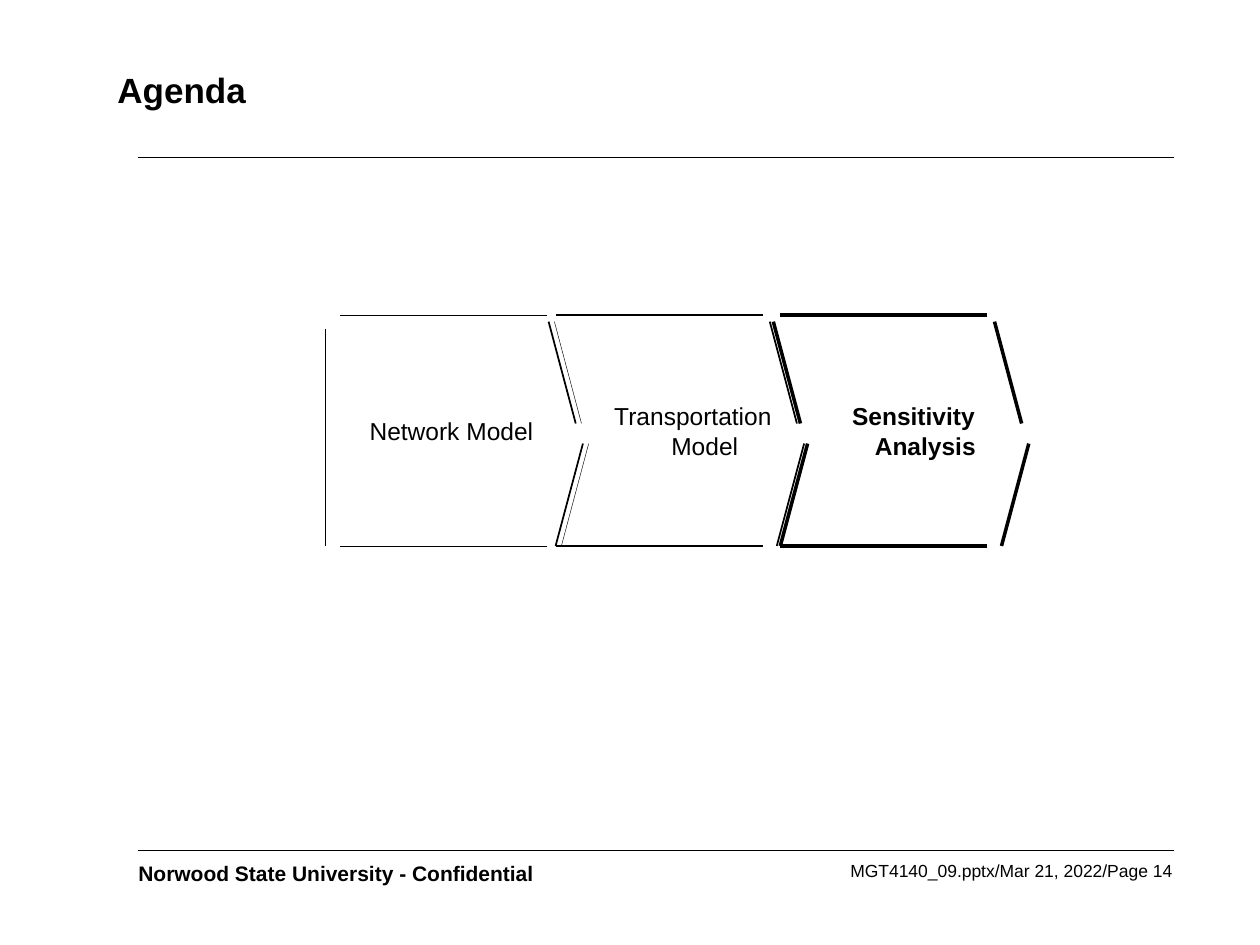
import pptx
import pptx.dml.color
import pptx.enum.shapes
import pptx.enum.text
import pptx.oxml
import pptx.oxml.ns
import pptx.util

Pt = pptx.util.Pt
ALIGN = pptx.enum.text.PP_ALIGN
ANCHOR = pptx.enum.text.MSO_ANCHOR
BLACK = pptx.dml.color.RGBColor(0, 0, 0)
FONT = "Arial"

# Steps of the agenda, in points
TOP, BOTTOM = 180, 312
BAR = 118.3        # length of the top and bottom bars
EDGE_STEP = 126.4  # from a step's left edge to its right edge
HANG = 13.5        # hanging indent of the labels


def add_line(shapes, x1, y1, x2, y2, weight):
    s = shapes.add_connector(pptx.enum.shapes.MSO_CONNECTOR.STRAIGHT,
                             Pt(x1), Pt(y1), Pt(x2), Pt(y2))
    s.line.color.rgb = BLACK
    s.line.width = Pt(weight)
    s._element.spPr.append(pptx.oxml.parse_xml(
        "<a:effectLst %s/>" % pptx.oxml.ns.nsdecls("a")))


def add_text(slide, text, x, y, w, h, size, bold=False,
             align=ALIGN.LEFT, anchor=ANCHOR.TOP):
    s = slide.shapes.add_textbox(Pt(x), Pt(y), Pt(w), Pt(h))
    tf = s.text_frame
    tf.word_wrap = True
    tf.vertical_anchor = anchor
    tf.text = text
    p = tf.paragraphs[0]
    p.alignment = align
    r = p.runs[0]
    r.font.name = FONT
    r.font.size = Pt(size)
    r.font.bold = bold
    r.font.color.rgb = BLACK
    return p


def add_label(slide, text, x, w, bold=False):
    p = add_text(slide, text, x, TOP, w, BOTTOM - TOP, 14, bold,
                 ALIGN.CENTER, ANCHOR.MIDDLE)
    pPr = p._p.get_or_add_pPr()
    pPr.set("marL", str(Pt(HANG)))
    pPr.set("indent", str(-Pt(HANG)))


def add_edge(shapes, x, weight):
    """Pointed side of a step: two slanted lines."""
    add_line(shapes, x + 11.5, 242, x - 4, 183.8, weight)
    add_line(shapes, x + 15.6, 253.5, x, BOTTOM, weight)


def add_step(slide, x, weight, first=False):
    shapes = slide.shapes.add_group_shape().shapes
    add_edge(shapes, x + EDGE_STEP, weight)
    for y in (TOP, BOTTOM):
        add_line(shapes, x + BAR, y, x, y, weight)
    if first:
        add_line(shapes, x - 8.6, 188, x - 8.6, BOTTOM, weight)
    else:
        add_edge(shapes, x, weight)


def main():
    prs = pptx.Presentation()
    prs.slide_width, prs.slide_height = Pt(720), Pt(540)
    slide = prs.slides.add_slide(prs.slide_layouts[6])

    # Footer and rules
    add_text(slide, "MGT4140_09.pptx/Mar 21, 2022/Page 14",
             401.8, 488, 275, 19, 10, align=ALIGN.RIGHT)
    add_text(slide, "Norwood State University - Confidential",
             72, 488, 276.5, 22, 12, bold=True)
    for y in (90, 486):
        add_line(slide.shapes, 79, y, 671, y, 1)

    # Title
    add_text(slide, "Agenda", 60, 18, 612, 66, 20, bold=True,
             anchor=ANCHOR.MIDDLE)

    # Step outlines; the current step is the heaviest
    add_step(slide, 317.5, 1)
    add_step(slide, 445.9, 2)
    add_step(slide, 194.4, 0.25, first=True)

    # Step labels
    add_label(slide, "Transportation Model", 342, 108)
    add_label(slide, "Sensitivity Analysis", 461.5, 121, bold=True)
    add_label(slide, "Network Model", 198, 120)

    prs.save("out.pptx")


if __name__ == "__main__":
    main()
